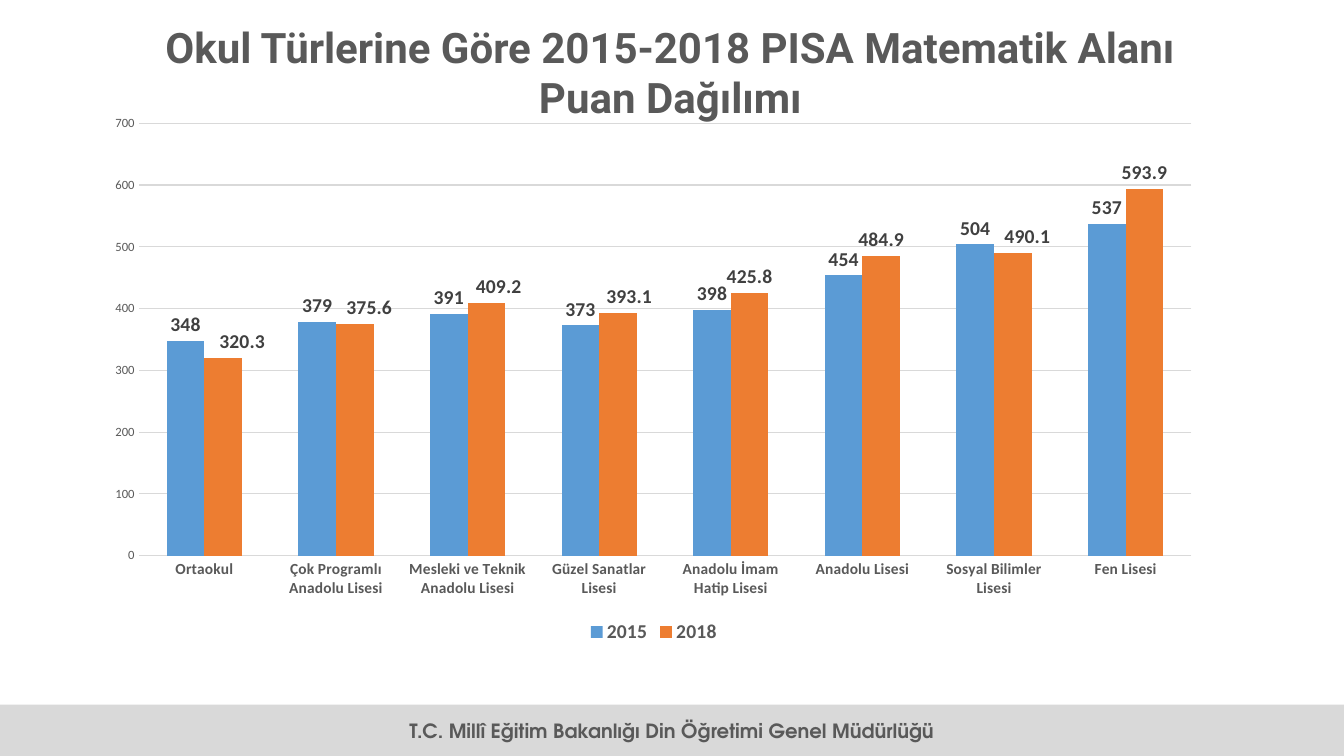
from lxml.etree import SubElement
from pptx import Presentation
from pptx.chart.data import CategoryChartData
from pptx.dml.color import RGBColor
from pptx.enum.chart import XL_CHART_TYPE, XL_LABEL_POSITION, XL_LEGEND_POSITION, XL_TICK_MARK
from pptx.enum.shapes import MSO_SHAPE
from pptx.enum.text import MSO_ANCHOR, MSO_AUTO_SIZE, PP_ALIGN
from pptx.oxml.ns import qn
from pptx.util import Inches, Pt


def style_font(font, color, **values):
    font.color.rgb = RGBColor.from_string(color)
    for name, value in values.items():
        setattr(font, name, value)


def add_layout(parent, position, **values):
    for old in parent.findall(qn("c:layout")):
        parent.remove(old)
    layout = SubElement(parent, qn("c:layout"))
    manual = SubElement(layout, qn("c:manualLayout"))
    for name, value in values.items():
        SubElement(manual, qn(f"c:{name}")).set("val", str(value))
    parent.insert(position, layout)


GRAY = "595959"
LIGHT_GRAY = "D9D9D9"

deck = Presentation()
deck.slide_width = Inches(13.33)
deck.slide_height = Inches(7.5)
page = deck.slides.add_slide(deck.slide_layouts[5])

footer = page.shapes.add_shape(MSO_SHAPE.RECTANGLE, 0, Inches(6.99), deck.slide_width, Inches(0.52))
footer.shadow.inherit = False
footer.fill.solid()
footer.fill.fore_color.rgb = RGBColor.from_string(LIGHT_GRAY)
footer.line.fill.background()

footer_box = page.shapes.add_textbox(Inches(0.11), Inches(7.05), Inches(13.11), Inches(0.39))
title = page.shapes.title
for name, value in {"left": 1.04, "top": 0.16, "width": 11.22, "height": 1.1}.items():
    setattr(title, name, Inches(value))

texts = [
    (footer_box, "T.C. Millî Eğitim Bakanlığı Din Öğretimi Genel Müdürlüğü",
     "TeX Gyre Adventor", 14, MSO_ANCHOR.MIDDLE),
    (title, "Okul Türlerine Göre 2015-2018 PISA Matematik Alanı Puan Dağılımı",
     "Roboto", 30, MSO_ANCHOR.TOP),
]
for box, text, face, size, anchor in texts:
    frame = box.text_frame
    frame_format = {"word_wrap": True, "auto_size": MSO_AUTO_SIZE.NONE, "vertical_anchor": anchor}
    for name, value in frame_format.items():
        setattr(frame, name, value)
    para = frame.paragraphs[0]
    para.alignment = PP_ALIGN.CENTER
    span = para.add_run()
    span.text = text
    style_font(span.font, GRAY, name=face, size=Pt(size), bold=True)

scores = CategoryChartData()
scores.categories = [
    "Ortaokul", "Çok Programlı Anadolu Lisesi", "Mesleki ve Teknik Anadolu Lisesi",
    "Güzel Sanatlar Lisesi", "Anadolu İmam Hatip Lisesi", "Anadolu Lisesi",
    "Sosyal Bilimler Lisesi", "Fen Lisesi",
]
scores.add_series("2015", [348, 379, 391, 373, 398, 454, 504, 537])
scores.add_series("2018", [320.3, 375.6, 409.2, 393.1, 425.8, 484.9, 490.1, 593.9])
chart = page.shapes.add_chart(
    XL_CHART_TYPE.COLUMN_CLUSTERED, Inches(0.93), Inches(1.04), Inches(11.11), Inches(5.39), scores
).chart
chart.has_title = False
style_font(chart.font, "000000", name="Calibri", size=Pt(10))
add_layout(chart.plots[0]._element.getparent(), 0, layoutTarget="inner",
           xMode="edge", yMode="edge", x=0.04, y=0.034, w=0.94, h=0.796)

chart.has_legend = True
chart.legend.position = XL_LEGEND_POSITION.BOTTOM
chart.legend.include_in_layout = False
style_font(chart.legend.font, GRAY, name="Calibri", size=Pt(14), bold=True)

for axis, size, bold in [(chart.category_axis, 11, True), (chart.value_axis, 9, False)]:
    axis.major_tick_mark = XL_TICK_MARK.NONE
    axis.minor_tick_mark = XL_TICK_MARK.NONE
    axis.format.line.fill.background()
    style_font(axis.tick_labels.font, GRAY, name="Calibri", size=Pt(size), bold=bold)
scale = {"minimum_scale": 0, "maximum_scale": 700, "major_unit": 100, "has_major_gridlines": True}
for name, value in scale.items():
    setattr(chart.value_axis, name, value)
gridline = chart.value_axis.major_gridlines.format.line
gridline.color.rgb = RGBColor.from_string(LIGHT_GRAY)
gridline.width = Pt(0.75)

plot = chart.plots[0]
for name, value in {"gap_width": 150, "overlap": 0, "vary_by_categories": False}.items():
    setattr(plot, name, value)
label_font = {"color": "404040", "name": "Calibri", "size": Pt(14), "bold": True}
for series, color in zip(plot.series, ["5B9BD5", "ED7D31"]):
    series.format.fill.solid()
    series.format.fill.fore_color.rgb = RGBColor.from_string(color)
    series.data_labels.show_value = True
    series.data_labels.position = XL_LABEL_POSITION.OUTSIDE_END
    style_font(series.data_labels.font, **label_font)

series_2018 = plot.series[1]
label_shifts = {0: 0.017, 1: 0.013, 2: 0.011, 3: 0.01, 6: 0.013}
for index, shift in label_shifts.items():
    label = series_2018.points[index].data_label
    label.position = XL_LABEL_POSITION.OUTSIDE_END
    style_font(label.font, **label_font)
for label_element in series_2018.data_labels._element.findall(qn("c:dLbl")):
    index = int(label_element.find(qn("c:idx")).get("val"))
    add_layout(label_element, 1, x=label_shifts[index], y=0)

deck.save("out.pptx")
